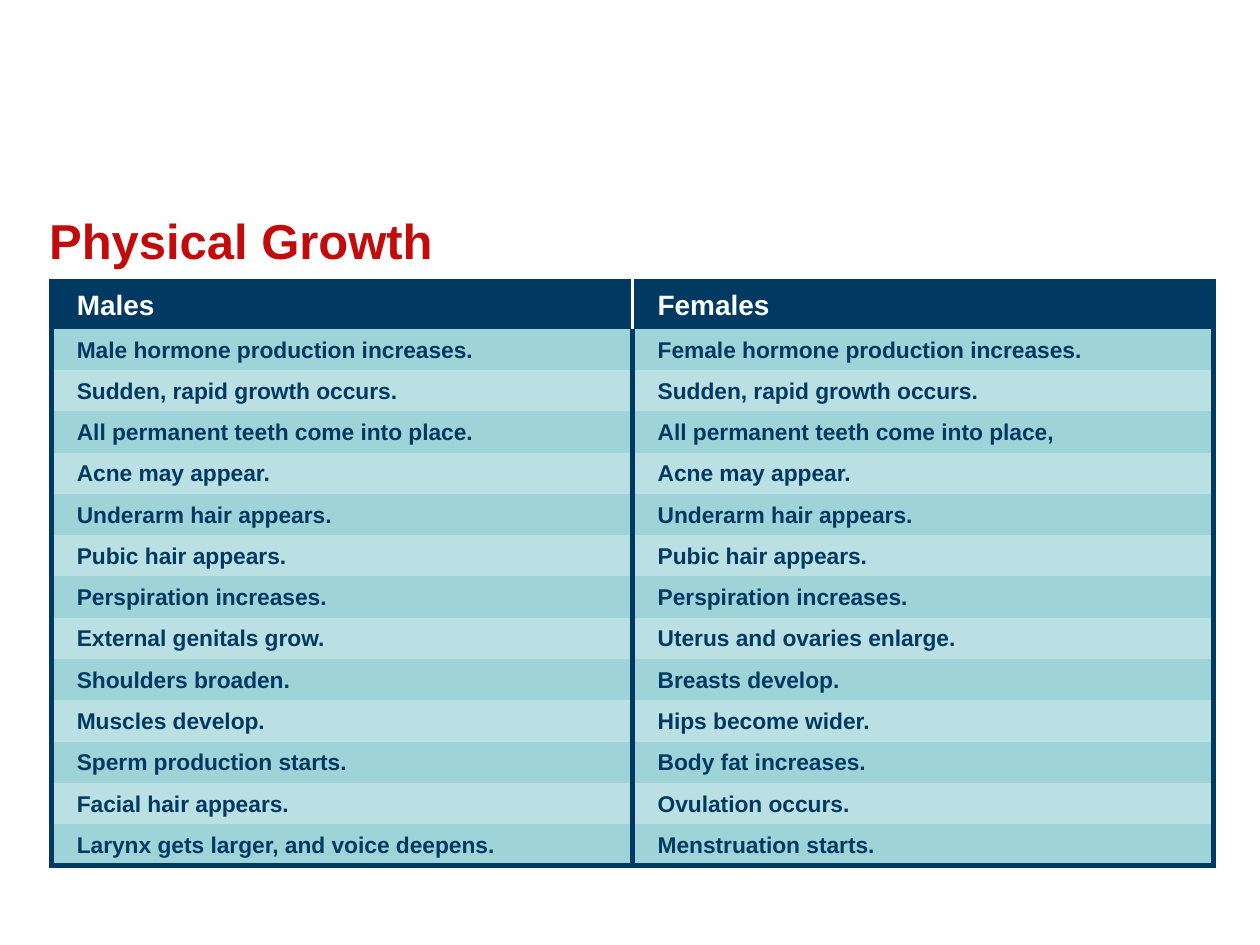
"""Build a slide with a table comparing physical growth in males and females."""
import pptx
import pptx.dml.color
import pptx.enum.text
import pptx.oxml
import pptx.oxml.ns
import pptx.util

TITLE = "Physical Growth"
HEADERS = ("Males", "Females")
CHANGES = [
    ("Male hormone production increases.", "Female hormone production increases."),
    ("Sudden, rapid growth occurs.", "Sudden, rapid growth occurs."),
    ("All permanent teeth come into place.", "All permanent teeth come into place,"),
    ("Acne may appear.", "Acne may appear."),
    ("Underarm hair appears.", "Underarm hair appears."),
    ("Pubic hair appears.", "Pubic hair appears."),
    ("Perspiration increases.", "Perspiration increases."),
    ("External genitals grow.", "Uterus and ovaries enlarge."),
    ("Shoulders broaden.", "Breasts develop."),
    ("Muscles develop.", "Hips become wider."),
    ("Sperm production starts.", "Body fat increases."),
    ("Facial hair appears.", "Ovulation occurs."),
    ("Larynx gets larger, and voice deepens.", "Menstruation starts."),
]

COLOURS = {"title": "C30B0B", "navy": "003A62", "white": "FFFFFF",
           "odd": "9ED3D7", "even": "BBE0E3"}
FONT = "Arial"
SLIDE_SIZE = (10, 7.5)
TITLE_BOX = (0.29, 1.59, 9.33, 0.68)
TABLE_BOX = (0.41, 2.23, 9.22, 4.64)
HEADER_HEIGHT = 0.38
PLAIN_TABLE_STYLE = "{2D5ABB26-0587-4C30-8999-92F81FD0307C}"


def rgb(name):
    return pptx.dml.color.RGBColor.from_string(COLOURS[name])


def write_text(text_frame, text, size, colour, spacing):
    paragraph = text_frame.paragraphs[0]
    paragraph.text = text
    paragraph.alignment = pptx.enum.text.PP_ALIGN.LEFT
    paragraph.line_spacing = spacing
    font = paragraph.runs[0].font
    font.name, font.size, font.bold = FONT, pptx.util.Pt(size), True
    font.color.rgb = rgb(colour)


def add_border(cell, side, colour, width):
    properties = cell._tc.get_or_add_tcPr()
    properties.append(pptx.oxml.parse_xml(
        f'<a:ln{side} {pptx.oxml.ns.nsdecls("a")} w="{pptx.util.Pt(width)}">'
        f'<a:solidFill><a:srgbClr val="{COLOURS[colour]}"/></a:solidFill></a:ln{side}>'))


def add_title(slide):
    title = slide.shapes.title
    title.left, title.top, title.width, title.height = map(pptx.util.Inches, TITLE_BOX)
    title.text_frame.auto_size = pptx.enum.text.MSO_AUTO_SIZE.NONE
    title.text_frame.vertical_anchor = pptx.enum.text.MSO_ANCHOR.MIDDLE
    write_text(title.text_frame, TITLE, size=28, colour="title", spacing=0.9)


def add_growth_table(slide):
    rows = [HEADERS, *CHANGES]
    last_row, last_column = len(rows) - 1, len(HEADERS) - 1
    frame = slide.shapes.add_table(len(rows), len(HEADERS), *map(pptx.util.Inches, TABLE_BOX))
    table = frame.table
    table._tbl.tblPr.find(pptx.oxml.ns.qn("a:tableStyleId")).text = PLAIN_TABLE_STYLE
    table.first_row = table.horz_banding = False
    body_height = (TABLE_BOX[3] - HEADER_HEIGHT) / len(CHANGES)

    for row_index, row in enumerate(rows):
        is_header = row_index == 0
        table.rows[row_index].height = pptx.util.Inches(HEADER_HEIGHT if is_header else body_height)
        fill = "navy" if is_header else ("even", "odd")[row_index % 2]
        divider = ("white", 2.25) if is_header else ("navy", 3)
        for column_index, text in enumerate(row):
            cell = table.cell(row_index, column_index)
            cell.margin_left = pptx.util.Inches(0.2)
            cell.vertical_anchor = pptx.enum.text.MSO_ANCHOR.MIDDLE
            write_text(cell.text_frame, text, size=16 if is_header else 13,
                       colour="white" if is_header else "navy", spacing=1.05)
            add_border(cell, "L", *(("navy", 3) if column_index == 0 else divider))
            add_border(cell, "R", *(("navy", 3) if column_index == last_column else divider))
            if is_header:
                add_border(cell, "T", "navy", 3)
            if row_index == last_row:
                add_border(cell, "B", "navy", 3)
            cell.fill.solid()
            cell.fill.fore_color.rgb = rgb(fill)


def main():
    presentation = pptx.Presentation()
    presentation.slide_width, presentation.slide_height = map(pptx.util.Inches, SLIDE_SIZE)
    slide = presentation.slides.add_slide(presentation.slide_layouts.get_by_name("Title Only"))
    add_title(slide)
    add_growth_table(slide)
    presentation.save("out.pptx")


if __name__ == "__main__":
    main()
